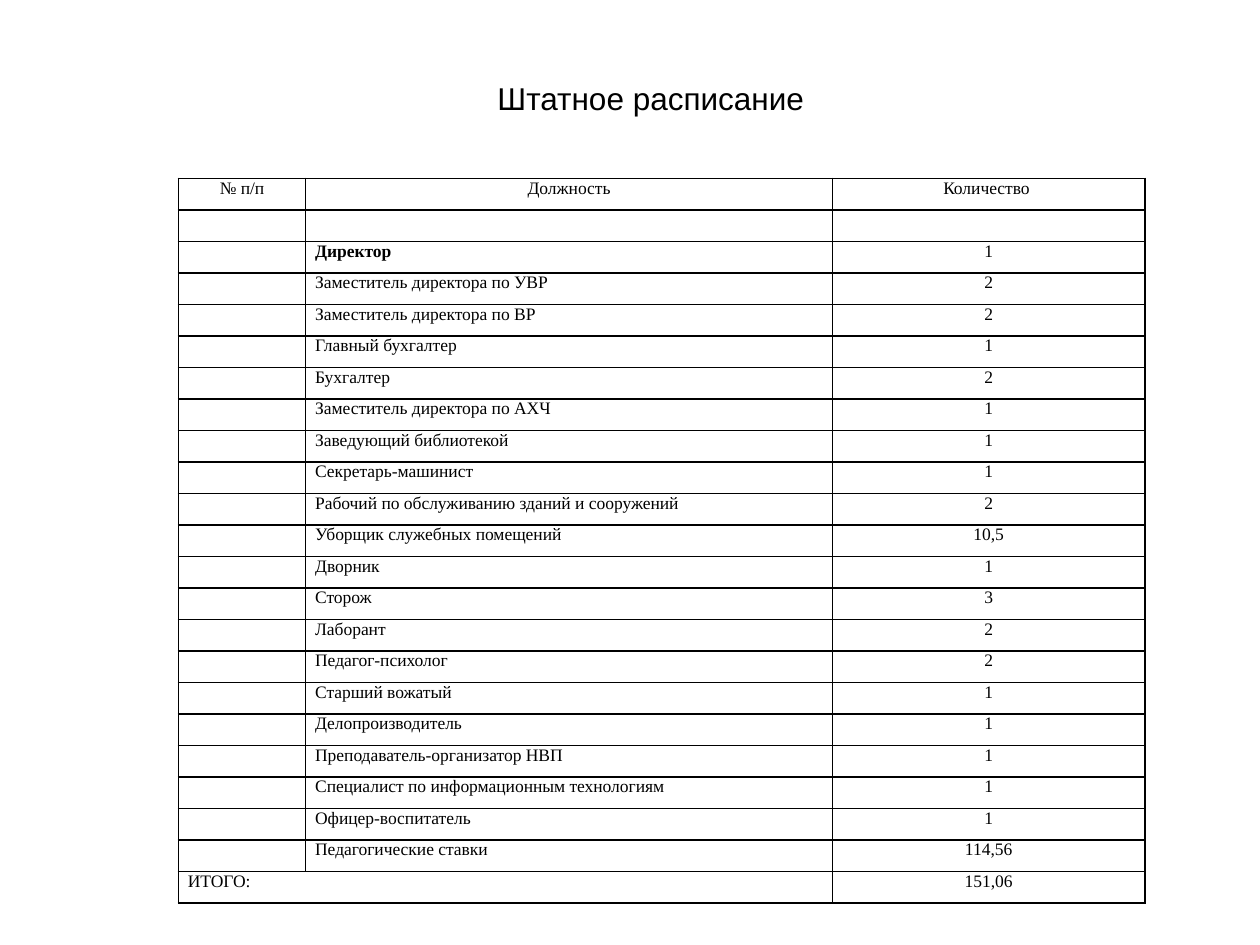
import lxml.etree
import pptx
import pptx.dml.color
import pptx.enum.text
import pptx.oxml.ns
import pptx.util

Pt = pptx.util.Pt
ALIGN = pptx.enum.text.PP_ALIGN
BLACK = "000000"
ROW_HEIGHT = 18
COLUMN_SHARES = (72.72, 300.96, 178.56)

HEADINGS = ("№ п/п", "Должность", "Количество ")
POSITIONS = (
    ("Директор", "1"),
    ("Заместитель директора по УВР", "2"),
    ("Заместитель директора по ВР", "2"),
    ("Главный бухгалтер", "1"),
    ("Бухгалтер", "2"),
    ("Заместитель директора по АХЧ", "1"),
    ("Заведующий библиотекой", "1"),
    ("Секретарь-машинист", "1"),
    ("Рабочий по обслуживанию зданий и сооружений", "2"),
    ("Уборщик служебных помещений", "10,5"),
    ("Дворник", "1"),
    ("Сторож", "3"),
    ("Лаборант", "2"),
    ("Педагог-психолог", "2"),
    ("Старший вожатый", "1"),
    ("Делопроизводитель", "1"),
    ("Преподаватель-организатор НВП", "1"),
    ("Специалист по информационным технологиям", "1"),
    ("Офицер-воспитатель", "1"),
    ("Педагогические ставки", "114,56"),
)
TOTAL = ("ИТОГО:", "", "151,06")


def color(value):
    return pptx.dml.color.RGBColor.from_string(value)


def add_element(parent, tag, **attributes):
    return lxml.etree.SubElement(parent, pptx.oxml.ns.qn(tag), attributes)


def write(paragraph, text, font, size, align, bold=False):
    paragraph.text = text
    paragraph.alignment = align
    for run in paragraph.runs:
        run.font.name = font
        run.font.size = Pt(size)
        run.font.bold = bold
        run.font.color.rgb = color(BLACK)
    if not text:
        # Keep empty rows from growing
        add_element(paragraph._p, "a:endParaRPr", sz=str(size * 100))


def add_borders(cell):
    properties = cell._tc.get_or_add_tcPr()
    for side in ("a:lnL", "a:lnR", "a:lnT", "a:lnB"):
        line = add_element(properties, side, w=str(Pt(1)))
        add_element(add_element(line, "a:solidFill"), "a:srgbClr", val=BLACK)


def add_title(slide, left, top, width, height):
    frame = slide.shapes.add_textbox(Pt(left), Pt(top), Pt(width), Pt(height)).text_frame
    frame.word_wrap = True
    frame.auto_size = pptx.enum.text.MSO_AUTO_SIZE.SHAPE_TO_FIT_TEXT
    write(frame.paragraphs[0], "Штатное расписание", "Arial", 18, ALIGN.CENTER)


def add_staff_table(slide, left, top, width):
    rows = [HEADINGS, ("", "", "")]
    rows += [("", job, count) for job, count in POSITIONS]
    rows.append(TOTAL)
    table = slide.shapes.add_table(
        len(rows), len(HEADINGS), Pt(left), Pt(top), Pt(width), Pt(ROW_HEIGHT * len(rows))
    ).table
    table.first_row = table.horz_banding = False
    for column, share in zip(table.columns, COLUMN_SHARES):
        column.width = Pt(width * share / sum(COLUMN_SHARES))

    for r, texts in enumerate(rows):
        table.rows[r].height = Pt(ROW_HEIGHT)
        for c, text in enumerate(texts):
            cell = table.cell(r, c)
            cell.margin_left = cell.margin_right = Pt(5.4)
            cell.margin_top = cell.margin_bottom = Pt(0)
            centred = r == 0 or c == 2
            write(cell.text_frame.paragraphs[0], text, "Times New Roman", 10,
                  ALIGN.CENTER if centred else ALIGN.LEFT, bold=text == "Директор")
            add_borders(cell)
            cell.fill.background()

    # The total label spans the first two columns
    last = len(rows) - 1
    table.cell(last, 0).merge(table.cell(last, 1))


def main():
    deck = pptx.Presentation()
    deck.slide_width, deck.slide_height = Pt(720), Pt(540)
    slide = deck.slides.add_slide(deck.slide_layouts[6])
    add_staff_table(slide, 102, 102, 552.24)
    add_title(slide, 234, 41.76, 275.76, 28.8)
    deck.save("out.pptx")


if __name__ == "__main__":
    main()
